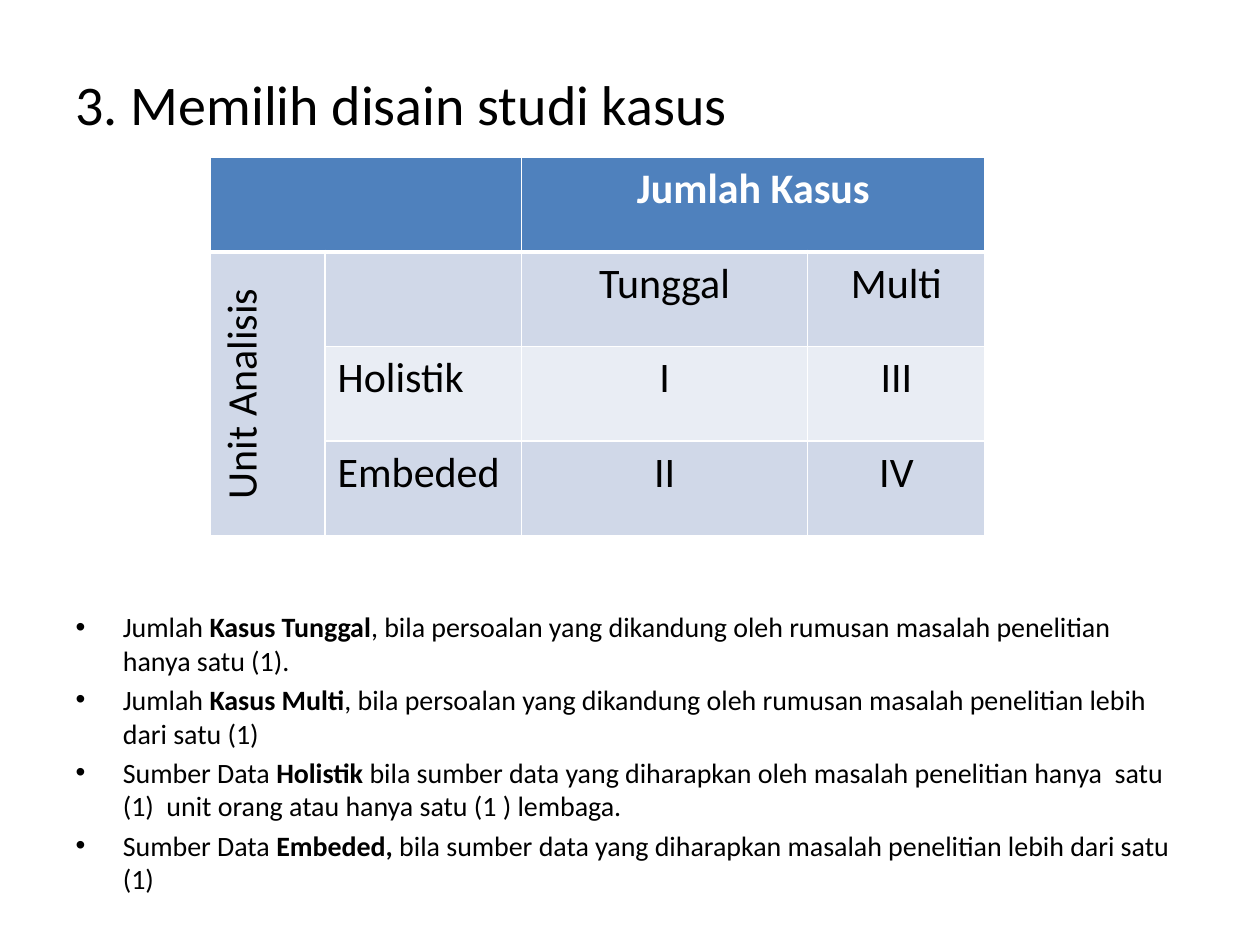
from dataclasses import dataclass

from lxml import etree
from pptx import Presentation
from pptx.dml.color import RGBColor
from pptx.enum.text import MSO_ANCHOR, MSO_AUTO_SIZE, PP_ALIGN
from pptx.oxml.ns import qn
from pptx.util import Inches, Pt

LEFT, CENTER = PP_ALIGN.LEFT, PP_ALIGN.CENTER
TOP = MSO_ANCHOR.TOP
NO_AUTOFIT = MSO_AUTO_SIZE.NONE

TABLE_ROWS = [
    ["", "", "Jumlah Kasus", ""],
    ["Unit Analisis", "", "Tunggal", "Multi"],
    ["", "Holistik", "I", "III"],
    ["", "Embeded", "II", "IV"],
]
COLUMN_WIDTHS = [0.91, 1.56, 2.27, 1.41]
ROW_HEIGHT = 0.75
LABEL_COLUMN = 1
MERGES = [((0, 0), (0, 1)), ((0, 2), (0, 3)), ((1, 0), (3, 0))]
DEFINITIONS = [
    ("Jumlah ", "Kasus Tunggal",
     ", bila persoalan yang dikandung oleh rumusan masalah penelitian hanya satu (1)."),
    ("Jumlah ", "Kasus Multi",
     ", bila persoalan yang dikandung oleh rumusan masalah penelitian lebih dari satu (1)"),
    ("Sumber Data ", "Holistik ",
     "bila sumber data yang diharapkan oleh masalah penelitian hanya  satu (1)  unit orang "
     "atau hanya satu (1 ) lembaga."),
    ("Sumber Data ", "Embeded, ",
     "bila sumber data yang diharapkan masalah penelitian lebih dari satu (1)"),
]


@dataclass(frozen=True)
class Theme:
    font: str = "Calibri"
    text: str = "000000"
    white: str = "FFFFFF"
    header: str = "4F81BD"
    bands: tuple = ("E9EDF4", "D0D8E8")
    title_size: int = 32
    table_size: int = 24
    body_size: int = 16
    body_gap: float = 3.2
    border: int = 1
    header_border: int = 3


class SlideBuilder:
    """Holds the theme and the current slide, and adds each kind of element."""

    def __init__(self, slide, theme):
        self.slide = slide
        self.theme = theme

    def add_run(self, paragraph, text, size, color, bold=False):
        run = paragraph.add_run()
        run.text = text
        run.font.name = self.theme.font
        run.font.size = Pt(size)
        run.font.bold = bold
        run.font.color.rgb = RGBColor.from_string(color)

    def place(self, shape, left, top, width, height):
        shape.left, shape.top = Inches(left), Inches(top)
        shape.width, shape.height = Inches(width), Inches(height)
        frame = shape.text_frame
        frame.word_wrap = True
        frame.auto_size = NO_AUTOFIT
        frame.vertical_anchor = TOP
        return frame

    def title(self, text, *box):
        paragraph = self.place(self.slide.shapes.title, *box).paragraphs[0]
        paragraph.alignment = LEFT
        self.add_run(paragraph, text, self.theme.title_size, self.theme.text)

    def bullets(self, items, *box):
        frame = self.place(self.slide.placeholders[1], *box)
        for index, (lead, term, meaning) in enumerate(items):
            paragraph = frame.add_paragraph() if index else frame.paragraphs[0]
            paragraph.space_before = Pt(self.theme.body_gap if index else 0)
            for text, bold in ((lead, False), (term, True), (meaning, False)):
                self.add_run(paragraph, text, self.theme.body_size, self.theme.text, bold)

    def borders(self, cell, top, bottom):
        properties = cell._tc.get_or_add_tcPr()
        widths = {"lnL": self.theme.border, "lnR": self.theme.border, "lnT": top, "lnB": bottom}
        for side, width in widths.items():
            line = etree.SubElement(properties, qn(f"a:{side}"), w=str(Pt(width)))
            fill = etree.SubElement(line, qn("a:solidFill"))
            etree.SubElement(fill, qn("a:srgbClr"), val=self.theme.white)

    def cell(self, cell, text, row, column):
        theme = self.theme
        is_header = row == 0
        self.borders(
            cell,
            theme.header_border if row == 1 else theme.border,
            theme.header_border if is_header else theme.border,
        )
        cell.fill.solid()
        band = theme.bands[1 if column == 0 else row % 2]
        cell.fill.fore_color.rgb = RGBColor.from_string(theme.header if is_header else band)
        if text:
            paragraph = cell.text_frame.paragraphs[0]
            paragraph.alignment = LEFT if column == LABEL_COLUMN else CENTER
            color = theme.white if is_header else theme.text
            self.add_run(paragraph, text, theme.table_size, color, is_header)

    def table(self, rows, column_widths, row_height, merges, left, top):
        table = self.slide.shapes.add_table(
            len(rows), len(column_widths), Inches(left), Inches(top),
            Inches(sum(column_widths)), Inches(row_height * len(rows)),
        ).table
        for column, width in zip(table.columns, column_widths):
            column.width = Inches(width)
        for row_index, values in enumerate(rows):
            for column_index, text in enumerate(values):
                self.cell(table.cell(row_index, column_index), text, row_index, column_index)
        for first, last in merges:
            table.cell(*first).merge(table.cell(*last))
        table.cell(1, 0)._tc.get_or_add_tcPr().set("vert", "vert270")


def main():
    presentation = Presentation()
    presentation.slide_width, presentation.slide_height = Inches(10), Inches(7.5)
    slide = presentation.slides.add_slide(presentation.slide_layouts[1])
    builder = SlideBuilder(slide, Theme())
    builder.title("3. Memilih disain studi kasus", 0.5, 0.5, 9, 0.7)
    builder.bullets(DEFINITIONS, 0.5, 4.79, 9, 2.24)
    builder.table(TABLE_ROWS, COLUMN_WIDTHS, ROW_HEIGHT, MERGES, 1.67, 1.25)
    presentation.save("out.pptx")


if __name__ == "__main__":
    main()
